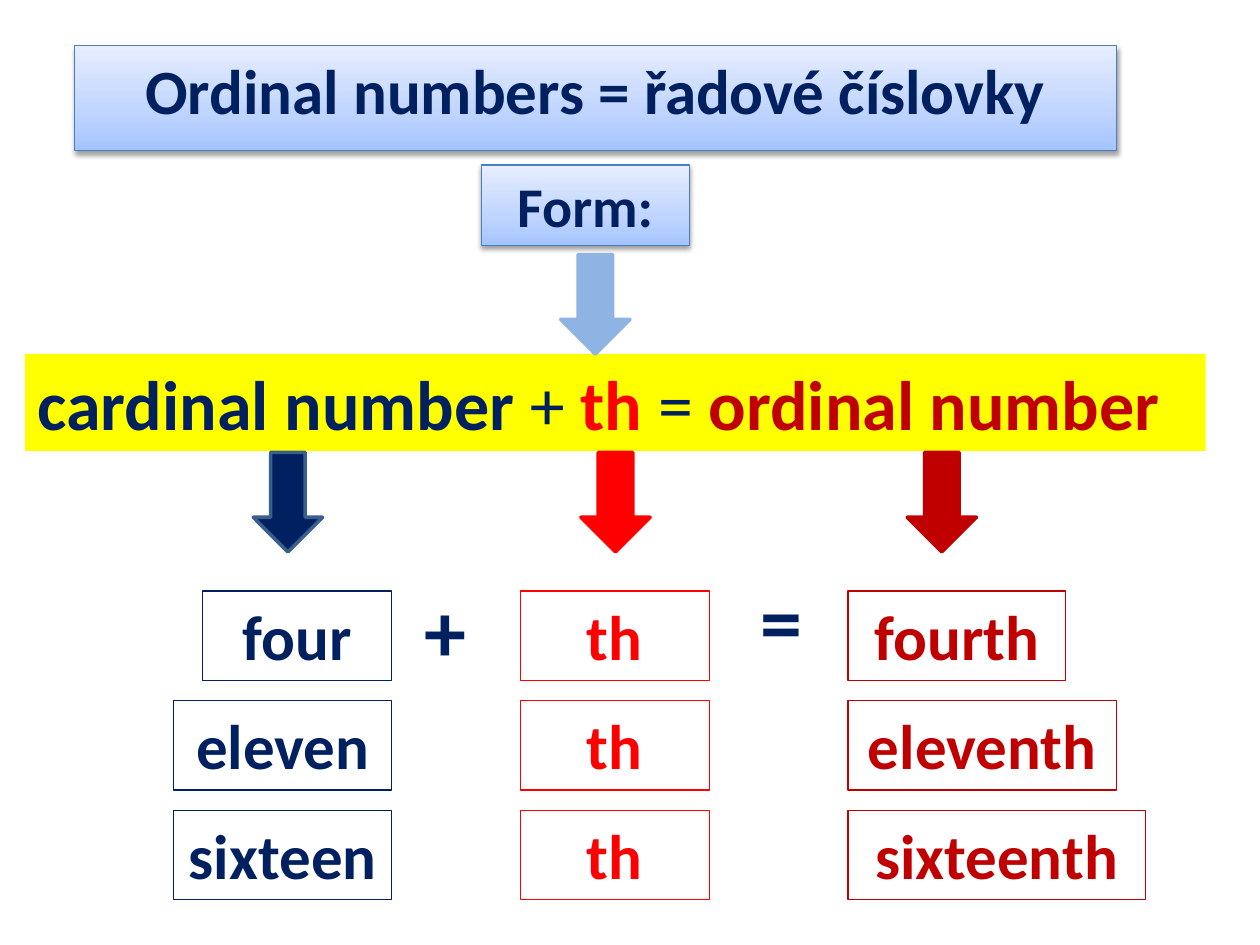
from typing import NamedTuple, Optional

from lxml.etree import SubElement
from pptx import Presentation
from pptx.dml.color import RGBColor
from pptx.enum.shapes import MSO_SHAPE
from pptx.enum.text import MSO_ANCHOR, MSO_AUTO_SIZE, PP_ALIGN
from pptx.oxml import parse_xml
from pptx.oxml.ns import nsdecls, qn
from pptx.util import Inches, Pt

NAVY = RGBColor(0x00, 0x20, 0x60)
RED = RGBColor(0xFF, 0x00, 0x00)
MAROON = RGBColor(0xC0, 0x00, 0x00)
YELLOW = RGBColor(0xFF, 0xFF, 0x00)
SKY = RGBColor(0x8E, 0xB4, 0xE3)
STEEL = RGBColor(0x3A, 0x5F, 0x8C)
BLUE = RGBColor(0x4B, 0x7E, 0xBC)
STOPS = ((0, "A4C4FF"), (35, "BFD4FF"), (100, "E6EEFF"))


class Box(NamedTuple):
    left: float
    top: float
    width: float
    height: float


class Run(NamedTuple):
    text: str
    color: RGBColor
    bold: bool = True


class Arrow(NamedTuple):
    left: float
    top: float
    fill: RGBColor
    line: RGBColor


class Sum(NamedTuple):
    """One example row: cardinal + th = ordinal, with the outer box widths."""
    first: str
    first_width: float
    last: str
    last_width: float


ARROWS = (
    Arrow(4.45, 2.02, SKY, SKY),
    Arrow(2.01, 3.59, NAVY, STEEL),
    Arrow(4.61, 3.59, RED, RED),
    Arrow(7.2, 3.59, MAROON, MAROON),
)
FORMULA = (
    Run("cardinal number ", NAVY),
    Run("+ ", NAVY, False),
    Run("th", RED),
    Run(" = ", NAVY, False),
    Run("ordinal number", MAROON),
)
SUMS = (
    Sum("four", 1.5, "fourth", 1.73),
    Sum("eleven", 1.73, "eleventh", 2.13),
    Sum("sixteen", 1.73, "sixteenth", 2.36),
)
FIRST_RIGHT, MID_LEFT, LAST_LEFT = 3.11, 4.13, 6.73
ROW_TOP, ROW_STEP, ROW_HEIGHT = 4.69, 0.87, 0.71


def place(shape, box: Box) -> None:
    shape.left, shape.top, shape.width, shape.height = map(Inches, box)


def write(shape, runs: tuple[Run, ...], size: int, align=PP_ALIGN.CENTER) -> None:
    frame = shape.text_frame
    frame.word_wrap = True
    frame.auto_size = MSO_AUTO_SIZE.SHAPE_TO_FIT_TEXT
    frame.vertical_anchor = MSO_ANCHOR.TOP
    para = frame.paragraphs[0]
    para.alignment = align
    para.font.size = Pt(size)
    para.font.name = "Calibri"
    for item in runs:
        run = para.add_run()
        run.text = item.text
        run.font.bold = item.bold
        run.font.color.rgb = item.color


def add_shape(slide, kind, box: Box, fill: Optional[RGBColor] = None,
              line: Optional[RGBColor] = None, weight: float = 0.75):
    shape = slide.shapes.add_shape(kind, *map(Inches, box))
    shape.shadow.inherit = False
    if fill is None:
        shape.fill.background()
    else:
        shape.fill.solid()
        shape.fill.fore_color.rgb = fill
    if line is None:
        shape.line.fill.background()
    else:
        shape.line.color.rgb = line
        shape.line.width = Pt(weight)
    return shape


def add_word(slide, text: str, color: RGBColor, box: Box) -> None:
    shape = add_shape(slide, MSO_SHAPE.RECTANGLE, box, line=color)
    write(shape, (Run(text, color),), 36)


def add_sign(slide, text: str, box: Box) -> None:
    sign = slide.shapes.add_textbox(*map(Inches, box))
    write(sign, (Run(text, NAVY),), 48, PP_ALIGN.LEFT)


def gloss(shape) -> None:
    """Give a heading its gradient, thin outline and soft shadow."""
    shape.fill.background()
    shape.line.color.rgb = BLUE
    shape.line.width = Pt(0.75)
    shape.shadow.inherit = False
    props = shape.element.spPr
    stops = "".join(
        f'<a:gs pos="{pos * 1000}"><a:srgbClr val="{color}"/></a:gs>'
        for pos, color in STOPS)
    grad = parse_xml(
        f'<a:gradFill {nsdecls("a")} rotWithShape="1"><a:gsLst>{stops}</a:gsLst>'
        '<a:lin ang="16200000" scaled="0"/></a:gradFill>')
    props.replace(props.find(qn("a:noFill")), grad)
    shadow = SubElement(
        props.find(qn("a:effectLst")), qn("a:outerShdw"), blurRad=str(Pt(3.1)),
        dist=str(Pt(1.6)), dir="5400000", rotWithShape="0")
    color = SubElement(shadow, qn("a:srgbClr"), val="000000")
    SubElement(color, qn("a:alpha"), val="38000")


def add_heads(slide) -> None:
    title = slide.shapes.title
    place(title, Box(0.59, 0.36, 8.27, 0.71))
    gloss(title)
    write(title, (Run("Ordinal numbers = řadové číslovky", NAVY),), 36)
    form = add_shape(slide, MSO_SHAPE.RECTANGLE, Box(3.82, 1.31, 1.65, 0.64))
    gloss(form)
    write(form, (Run("Form:", NAVY),), 32)


def add_sums(slide) -> None:
    for row, item in enumerate(SUMS):
        top = ROW_TOP + row * ROW_STEP
        words = (
            (item.first, NAVY, FIRST_RIGHT - item.first_width, item.first_width),
            ("th", RED, MID_LEFT, 1.5),
            (item.last, MAROON, LAST_LEFT, item.last_width),
        )
        for text, color, left, width in words:
            add_word(slide, text, color, Box(left, top, width, ROW_HEIGHT))
    add_sign(slide, "+", Box(3.27, 4.54, 0.55, 0.91))
    add_sign(slide, "=", Box(5.94, 4.46, 0.47, 0.91))


def main() -> None:
    deck = Presentation()
    deck.slide_width, deck.slide_height = Inches(10), Inches(7.5)
    slide = deck.slides.add_slide(deck.slide_layouts[5])
    add_heads(slide)
    band = add_shape(slide, MSO_SHAPE.RECTANGLE, Box(0.2, 2.81, 9.37, 0.77), YELLOW)
    write(band, FORMULA, 40, PP_ALIGN.LEFT)
    for arrow in ARROWS:
        add_shape(slide, MSO_SHAPE.DOWN_ARROW, Box(arrow.left, arrow.top, 0.55, 0.79),
                  arrow.fill, arrow.line, 2)
    add_sums(slide)
    deck.save("out.pptx")


if __name__ == "__main__":
    main()
